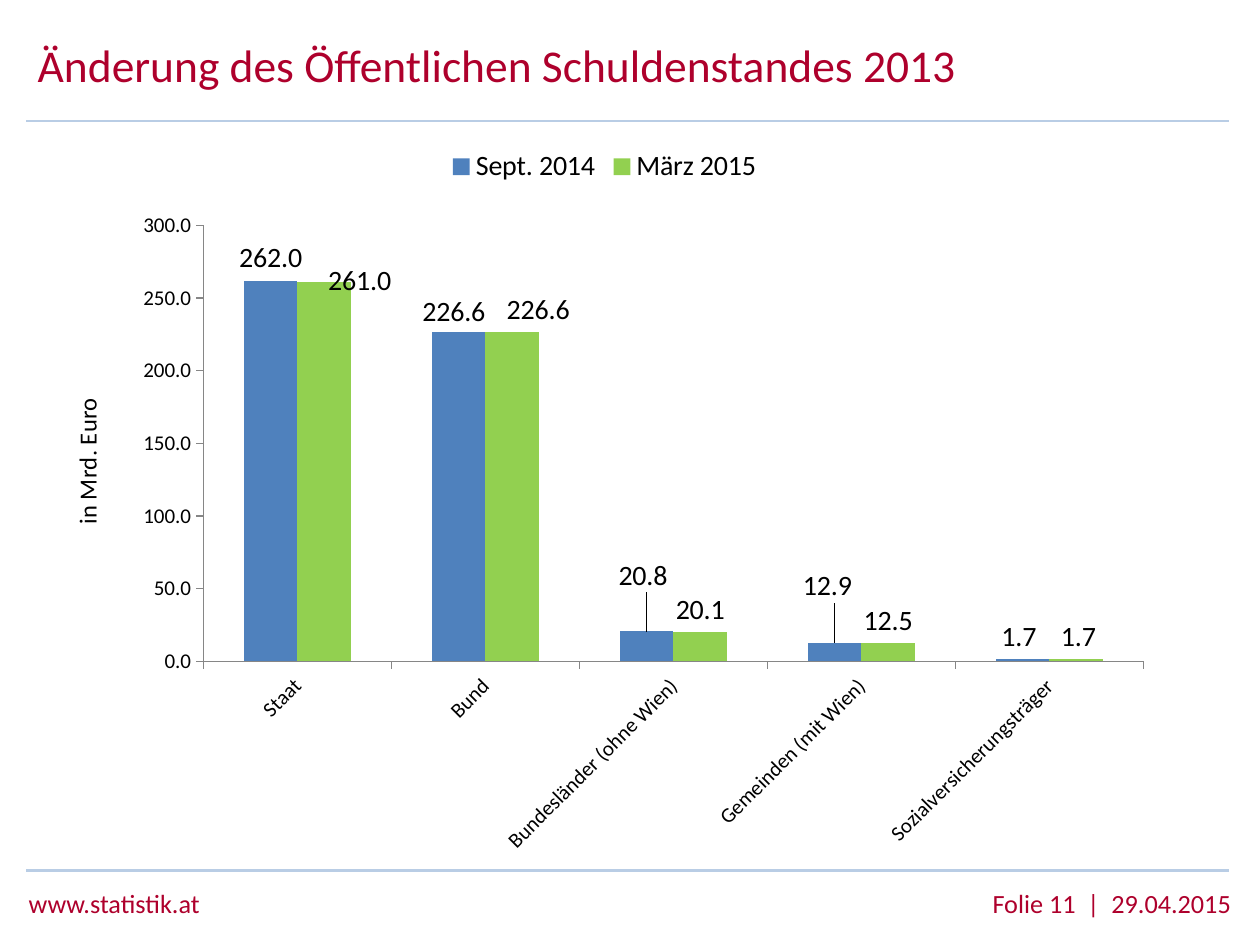
from dataclasses import dataclass

from lxml.etree import SubElement
from pptx import Presentation
from pptx.chart.data import CategoryChartData
from pptx.dml.color import RGBColor
from pptx.enum.chart import (XL_CHART_TYPE, XL_LABEL_POSITION,
                             XL_LEGEND_POSITION, XL_TICK_MARK)
from pptx.enum.shapes import MSO_CONNECTOR
from pptx.enum.text import MSO_ANCHOR, PP_ALIGN
from pptx.oxml import parse_xml
from pptx.oxml.ns import nsdecls, qn
from pptx.util import Cm, Pt


@dataclass(frozen=True)
class Theme:
    font: str = "Calibri"
    red: RGBColor = RGBColor(0xAE, 0x00, 0x2C)
    rule: RGBColor = RGBColor(0xB9, 0xCD, 0xE5)
    text: RGBColor = RGBColor(0, 0, 0)
    axis: RGBColor = RGBColor(0x86, 0x86, 0x86)
    title: Pt = Pt(26)
    footer: Pt = Pt(15)
    label: Pt = Pt(16)
    axis_title: Pt = Pt(14)
    tick: Pt = Pt(12)


@dataclass(frozen=True)
class TextLine:
    text: str
    left: float
    top: float
    width: float
    height: float
    size: Pt
    align: PP_ALIGN = PP_ALIGN.LEFT
    spacing: Pt | None = None


@dataclass(frozen=True)
class DebtSeries:
    name: str
    values: tuple[float, ...]
    color: RGBColor
    label_shifts: dict[int, tuple[float, float]]  # point -> share of chart size


THEME = Theme()
NUMBER = "#,##0.0"
RULE_LEFT, RULE_RIGHT = 0.53, 24.77
RULE_TOPS = (2.44, 17.55)
FOOTER_TOP = 17.75

LINES = (
    TextLine("Änderung des Öffentlichen Schuldenstandes 2013",
             0.51, 0.66, 19.35, 1.32, THEME.title, spacing=Pt(30)),
    TextLine("www.statistik.at", 0.33, FOOTER_TOP, 5.77, 0.89, THEME.footer),
    TextLine("Folie 11  |  29.04.2015", 15.87, FOOTER_TOP, 9.2, 0.89,
             THEME.footer, PP_ALIGN.RIGHT),
)
CATEGORIES = ("Staat", "Bund", "Bundesländer (ohne Wien)",
              "Gemeinden (mit Wien)", "Sozialversicherungsträger")
SERIES = (
    DebtSeries("Sept. 2014", (262, 226.6, 20.8, 12.9, 1.7),
               RGBColor(0x4F, 0x81, 0xBD),
               {1: (-0.004, 0.003), 2: (-0.003, -0.046),
                3: (-0.006, -0.047), 4: (-0.003, 0)}),
    DebtSeries("März 2015", (261, 226.6, 20.1, 12.5, 1.7),
               RGBColor(0x92, 0xD0, 0x50),
               {0: (0.03, 0.03), 1: (0.022, 0.001), 4: (0.002, 0)}),
)


def add_text(s, line: TextLine) -> None:
    box = s.shapes.add_textbox(Cm(line.left), Cm(line.top),
                               Cm(line.width), Cm(line.height))
    tf = box.text_frame
    tf.word_wrap = True
    tf.vertical_anchor = MSO_ANCHOR.MIDDLE
    p = tf.paragraphs[0]
    p.text = line.text
    p.alignment = line.align
    if line.spacing:
        p.line_spacing = line.spacing
    style_font(p.font, line.size, THEME.red)


def add_rule(s, top: float) -> None:
    ln = s.shapes.add_connector(MSO_CONNECTOR.STRAIGHT, Cm(RULE_LEFT), Cm(top),
                                Cm(RULE_RIGHT), Cm(top))
    ln.line.color.rgb = THEME.rule
    ln.line.width = Pt(1.5)
    SubElement(ln._element.spPr, qn("a:effectLst"))


def style_font(font, size: Pt, color: RGBColor = THEME.text) -> None:
    font.name = THEME.font
    font.size = size
    font.bold = False
    font.color.rgb = color


def make_layout(**settings):
    """Return a manual chart layout; settings follow the schema's order."""
    items = "".join(f'<c:{k} val="{v}"/>' for k, v in settings.items())
    return parse_xml(f'<c:layout {nsdecls("c")}><c:manualLayout>{items}'
                     "</c:manualLayout></c:layout>")


def set_layout(parent, after: str, layout) -> None:
    """Replace any layout of parent, placing the new one behind a child."""
    for old in parent.findall(qn("c:layout")):
        parent.remove(old)
    parent.find(qn(after)).addnext(layout)


def style_axis(axis) -> None:
    axis.has_major_gridlines = False
    axis.major_tick_mark = XL_TICK_MARK.OUTSIDE
    axis.minor_tick_mark = XL_TICK_MARK.NONE
    axis.format.line.color.rgb = THEME.axis
    axis.format.line.width = Pt(0.75)
    style_font(axis.tick_labels.font, THEME.tick)


def style_series(series, debt: DebtSeries) -> None:
    series.format.fill.solid()
    series.format.fill.fore_color.rgb = debt.color
    series.invert_if_negative = False
    labels = series.data_labels
    labels.show_value = True
    labels.number_format = NUMBER
    labels.number_format_is_linked = False
    labels.position = XL_LABEL_POSITION.OUTSIDE_END
    style_font(labels.font, THEME.label)
    for i, (dx, dy) in debt.label_shifts.items():
        label = series.points[i].data_label
        style_font(label.font, THEME.label)
        label.position = XL_LABEL_POSITION.OUTSIDE_END
        dlbl = series._element.xpath(f"c:dLbls/c:dLbl[c:idx/@val='{i}']")[0]
        set_layout(dlbl, "c:idx", make_layout(x=dx, y=dy))


def add_debt_chart(s) -> None:
    data = CategoryChartData(number_format=NUMBER)
    data.categories = CATEGORIES
    for debt in SERIES:
        data.add_series(debt.name, debt.values)
    chart = s.shapes.add_chart(XL_CHART_TYPE.COLUMN_CLUSTERED, Cm(0.3), Cm(2.72),
                               Cm(23.77), Cm(14.6), data).chart
    style_font(chart.font, THEME.label)
    chart.has_title = False
    chart.has_legend = True
    chart.legend.position = XL_LEGEND_POSITION.TOP
    chart.legend.include_in_layout = False
    style_font(chart.legend.font, THEME.label)

    plot = chart.plots[0]
    plot.vary_by_categories = False
    plot.gap_width = 150
    plot.overlap = 0
    for series, debt in zip(plot.series, SERIES):
        style_series(series, debt)

    cat, val = chart.category_axis, chart.value_axis
    for axis in (cat, val):
        style_axis(axis)
    cat._element.find(qn("c:txPr")).find(qn("a:bodyPr")).set("rot", "-2700000")
    val.minimum_scale, val.maximum_scale, val.major_unit = 0, 300, 50
    val.tick_labels.number_format = NUMBER
    val.tick_labels.number_format_is_linked = False
    tf = val.axis_title.text_frame
    tf.text = "in Mrd. Euro"
    style_font(tf.paragraphs[0].runs[0].font, THEME.axis_title)
    tf._txBody.find(qn("a:bodyPr")).set("rot", "-5400000")
    set_layout(val.axis_title._element, "c:tx",
               make_layout(xMode="edge", yMode="edge", x=0.043, y=0.357))

    area = chart._chartSpace.chart.plotArea
    for old in area.findall(qn("c:layout")):
        area.remove(old)
    area.insert(0, make_layout(layoutTarget="inner", xMode="edge", yMode="edge",
                               x=0.16, y=0.125, w=0.797, h=0.602))


def main() -> None:
    prs = Presentation()
    prs.slide_width, prs.slide_height = Cm(25.4), Cm(19.05)
    s = prs.slides.add_slide(prs.slide_layouts[6])
    for line in LINES:
        add_text(s, line)
    for top in RULE_TOPS:
        add_rule(s, top)
    add_debt_chart(s)
    prs.save("out.pptx")


if __name__ == "__main__":
    main()
